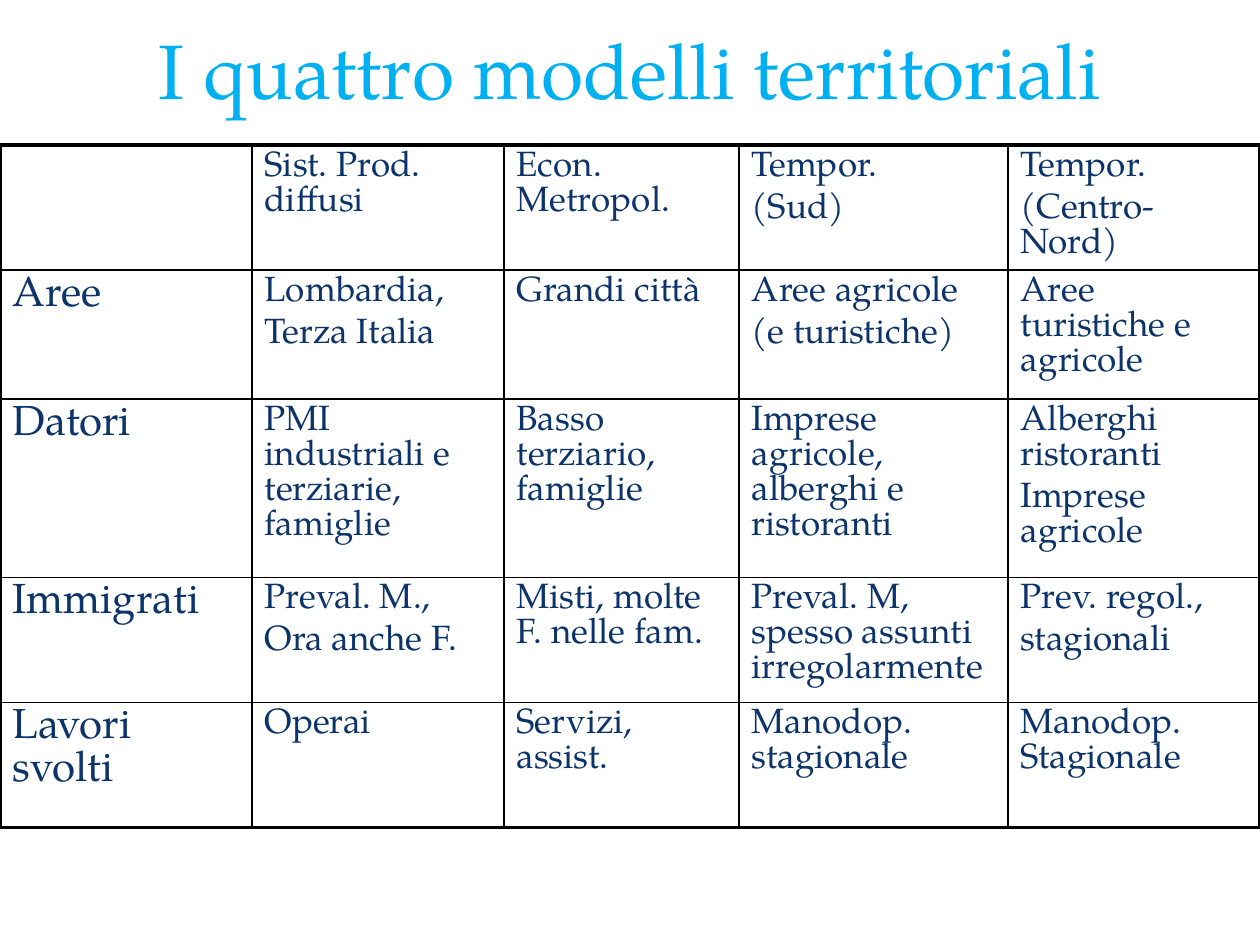
from lxml import etree
from pptx import Presentation
from pptx import util as u
from pptx.dml import color
from pptx.enum import text
from pptx.oxml import ns

FONT = "TeX Gyre Pagella"
TITLE = "I quattro modelli territoriali"
TITLE_COLOR, TEXT_COLOR, BORDER_COLOR = "00B0F0", "0C346B", "000000"
TITLE_SIZE, LABEL_SIZE, BODY_SIZE = 44, 24, 20
OUTER_BORDER, INNER_BORDER = 2.25, 1
COLUMN_WIDTHS = [5.08, 5.08, 4.74, 5.42, 5.08]
ROW_HEIGHTS = [2.52, 2.6, 3.6, 2.52, 2.52]

# Each line of a cell is a paragraph.
ROWS = [
    ["", "Sist. Prod. diffusi", "Econ. Metropol.", "Tempor.\n(Sud)",
     "Tempor.\n(Centro-Nord)"],
    ["Aree", "Lombardia,\nTerza Italia", "Grandi città",
     "Aree agricole\n(e turistiche)", "Aree turistiche e agricole"],
    ["Datori", "PMI industriali e terziarie, famiglie",
     "Basso terziario, famiglie", "Imprese agricole, alberghi e ristoranti",
     "Alberghi ristoranti\nImprese agricole"],
    ["Immigrati", "Preval. M.,\nOra anche F.", "Misti, molte F. nelle fam.",
     "Preval. M, spesso assunti irregolarmente", "Prev. regol.,\nstagionali"],
    ["Lavori svolti", "Operai", "Servizi, assist.", "Manodop. stagionale",
     "Manodop. Stagionale"],
]


def rgb(value):
    return color.RGBColor.from_string(value)


def write(frame, content, size, hex_color):
    for index, line in enumerate(content.split("\n")):
        paragraph = frame.paragraphs[0] if index == 0 else frame.add_paragraph()
        paragraph.line_spacing = u.Pt(size)
        if index:
            paragraph.space_before = u.Pt(size * 0.2)
        paragraph.font.size = u.Pt(size)
        if not line:
            continue
        run = paragraph.add_run()
        run.text = line
        run.font.name = FONT
        run.font.size = u.Pt(size)
        run.font.color.rgb = rgb(hex_color)


def set_borders(cell, widths):
    """Draw the left, right, top and bottom borders, with widths in points."""
    properties = cell._tc.get_or_add_tcPr()
    for index, (side, width) in enumerate(zip("LRTB", widths)):
        line = etree.Element(ns.qn(f"a:ln{side}"), w=str(u.Pt(width)))
        fill = etree.SubElement(line, ns.qn("a:solidFill"))
        etree.SubElement(fill, ns.qn("a:srgbClr"), val=BORDER_COLOR)
        properties.insert(index, line)


def add_title(slide):
    box = slide.shapes.add_textbox(u.Cm(1.27), u.Cm(0.19), u.Cm(22.86), u.Cm(2.39))
    frame = box.text_frame
    frame.word_wrap = True
    frame.vertical_anchor = text.MSO_ANCHOR.MIDDLE
    write(frame, TITLE, TITLE_SIZE, TITLE_COLOR)
    title = frame.paragraphs[0]
    title.alignment = text.PP_ALIGN.CENTER
    title.line_spacing = None


def add_models_table(slide):
    last_row, last_column = len(ROWS) - 1, len(COLUMN_WIDTHS) - 1
    table = slide.shapes.add_table(
        len(ROWS), len(COLUMN_WIDTHS), u.Cm(0), u.Cm(2.92),
        u.Cm(sum(COLUMN_WIDTHS)), u.Cm(sum(ROW_HEIGHTS))).table
    table.first_row = table.horz_banding = False
    for column, width in zip(table.columns, COLUMN_WIDTHS):
        column.width = u.Cm(width)
    for row, height in zip(table.rows, ROW_HEIGHTS):
        row.height = u.Cm(height)
    for r, row in enumerate(ROWS):
        for c, content in enumerate(row):
            cell = table.cell(r, c)
            cell.fill.background()
            edges = (c == 0, c == last_column, r == 0, r == last_row)
            set_borders(cell, [OUTER_BORDER if edge else INNER_BORDER
                               for edge in edges])
            size = LABEL_SIZE if c == 0 else BODY_SIZE
            write(cell.text_frame, content, size, TEXT_COLOR)


def main():
    presentation = Presentation()
    presentation.slide_width = u.Cm(25.4)
    presentation.slide_height = u.Cm(19.05)
    slide = presentation.slides.add_slide(presentation.slide_layouts[6])
    add_title(slide)
    add_models_table(slide)
    presentation.save("out.pptx")


if __name__ == "__main__":
    main()
